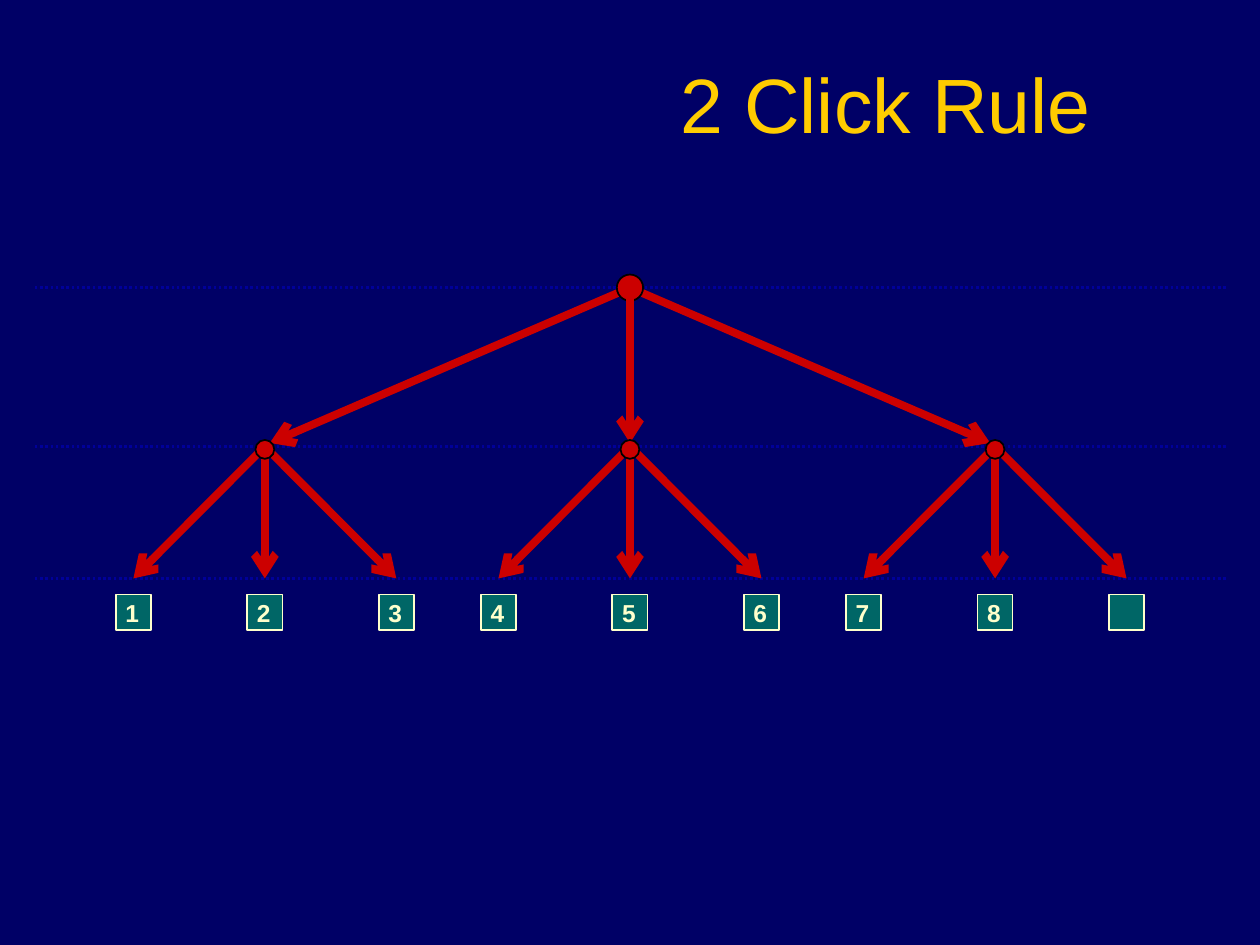
from lxml import etree
from pptx import Presentation
from pptx.dml.color import RGBColor
from pptx.enum.dml import MSO_LINE
from pptx.enum.shapes import MSO_CONNECTOR, MSO_SHAPE
from pptx.enum.text import MSO_ANCHOR, MSO_AUTO_SIZE, PP_ALIGN
from pptx.oxml.ns import qn
from pptx.util import Cm, Pt

NAVY = RGBColor(0x00, 0x00, 0x66)
BLUE = RGBColor(0x00, 0x00, 0x99)
GOLD = RGBColor(0xFF, 0xCC, 0x00)
RED = RGBColor(0xCC, 0x00, 0x00)
BLACK = RGBColor(0x00, 0x00, 0x00)
TEAL = RGBColor(0x00, 0x66, 0x66)
CREAM = RGBColor(0xFF, 0xFF, 0xCC)

STRAIGHT = MSO_CONNECTOR.STRAIGHT
OVAL, RECTANGLE = MSO_SHAPE.OVAL, MSO_SHAPE.RECTANGLE
LEFT, RIGHT = PP_ALIGN.LEFT, PP_ALIGN.RIGHT
MIDDLE, TOP = MSO_ANCHOR.MIDDLE, MSO_ANCHOR.TOP
FIT_SHAPE = MSO_AUTO_SIZE.SHAPE_TO_FIT_TEXT
DOTTED = MSO_LINE.ROUND_DOT

# Tree geometry in centimetres
CENTRE_X = 12.7
BRANCH_GAP, LEAF_GAP = 7.36, 2.65
LEVELS = ROOT_Y, BRANCH_Y, LEAF_Y = 5.8, 9.0, 11.66
NODE_Y, SQUARE_Y = 9.06, 12.34
SIDES = (-1, 0, 1)
LAST_LABEL = 8


class TreeSlide:
    font = "Arial"

    def __init__(self, page):
        self.page = page
        page.background.fill.solid()
        page.background.fill.fore_color.rgb = NAVY

    def line(self, start, end, color, width):
        x1, y1, x2, y2 = (Cm(value) for value in (*start, *end))
        line = self.page.shapes.add_connector(STRAIGHT, x1, y1, x2, y2)
        line.line.color.rgb = color
        line.line.width = Pt(width)
        etree.SubElement(line._element.spPr, qn("a:effectLst"))
        return line

    def level(self, y):
        self.line((24.71, y), (0.69, y), BLUE, 1.5).line.dash_style = DOTTED

    def arrow(self, start, end):
        arrow = self.line(start, end, RED, 4.5)
        outline = arrow.line._get_or_add_ln()
        etree.SubElement(outline, qn("a:tailEnd"), type="arrow")

    def shape(self, kind, x, y, size, fill, outline):
        """Add a square-framed shape centred on x, y."""
        shape = self.page.shapes.add_shape(
            kind, Cm(x - size / 2), Cm(y - size / 2), Cm(size), Cm(size))
        shape.shadow.inherit = False
        shape.fill.solid()
        shape.fill.fore_color.rgb = fill
        shape.line.color.rgb = outline
        shape.line.width = Pt(1)

    def node(self, x, y, size):
        self.shape(OVAL, x, y, size, RED, BLACK)

    def text(self, text, left, top, width, height, size, color,
             bold=False, align=LEFT, anchor=TOP):
        box = self.page.shapes.add_textbox(
            Cm(left), Cm(top), Cm(width), Cm(height))
        box.text_frame.vertical_anchor = anchor
        para = box.text_frame.paragraphs[0]
        para.alignment = align
        run = para.add_run()
        run.text = text
        run.font.name = self.font
        run.font.size = Pt(size)
        run.font.bold = bold
        run.font.color.rgb = color
        return box

    def title(self, text):
        box = self.text(text, 0, 0.48, 22.25, 3.18, 44, GOLD,
                        align=RIGHT, anchor=MIDDLE)
        box.text_frame.word_wrap = True
        properties = box.text_frame.paragraphs[0].runs[0].font._element
        effects = etree.Element(qn("a:effectLst"))
        shadow = etree.SubElement(effects, qn("a:outerShdw"),
                                  dist="38100", dir="2700000")
        etree.SubElement(shadow, qn("a:srgbClr"), val=str(BLACK))
        properties.find(qn("a:solidFill")).addnext(effects)

    def label(self, text, x):
        box = self.text(text, x - 0.41, 11.94, 0.81, 0.84, 14, CREAM, bold=True)
        box.text_frame.word_wrap = False
        box.text_frame.auto_size = FIT_SHAPE


def main():
    deck = Presentation()
    deck.slide_width, deck.slide_height = Cm(25.4), Cm(19.05)
    tree = TreeSlide(deck.slides.add_slide(deck.slide_layouts[6]))

    for y in LEVELS:
        tree.level(y)
    tree.title("2 Click Rule")

    branches = [CENTRE_X + side * BRANCH_GAP for side in SIDES]
    root = (CENTRE_X, ROOT_Y)
    for side in (-1, 1):
        tree.arrow(root, (CENTRE_X + side * (BRANCH_GAP - 0.1), 8.93))
    tree.node(*root, 0.53)
    tree.arrow(root, (CENTRE_X, 8.93))

    for x in branches:
        for side in SIDES:
            tree.arrow((x, BRANCH_Y), (x + side * LEAF_GAP, LEAF_Y))

    leaves = [x + side * LEAF_GAP for x in branches for side in SIDES]
    for number, x in enumerate(leaves, start=1):
        tree.shape(RECTANGLE, x, SQUARE_Y, 0.71, TEAL, CREAM)
        if number <= LAST_LABEL:
            tree.label(str(number), x)

    for x in branches:
        tree.node(x, NODE_Y, 0.38)

    deck.save("out.pptx")


if __name__ == "__main__":
    main()
